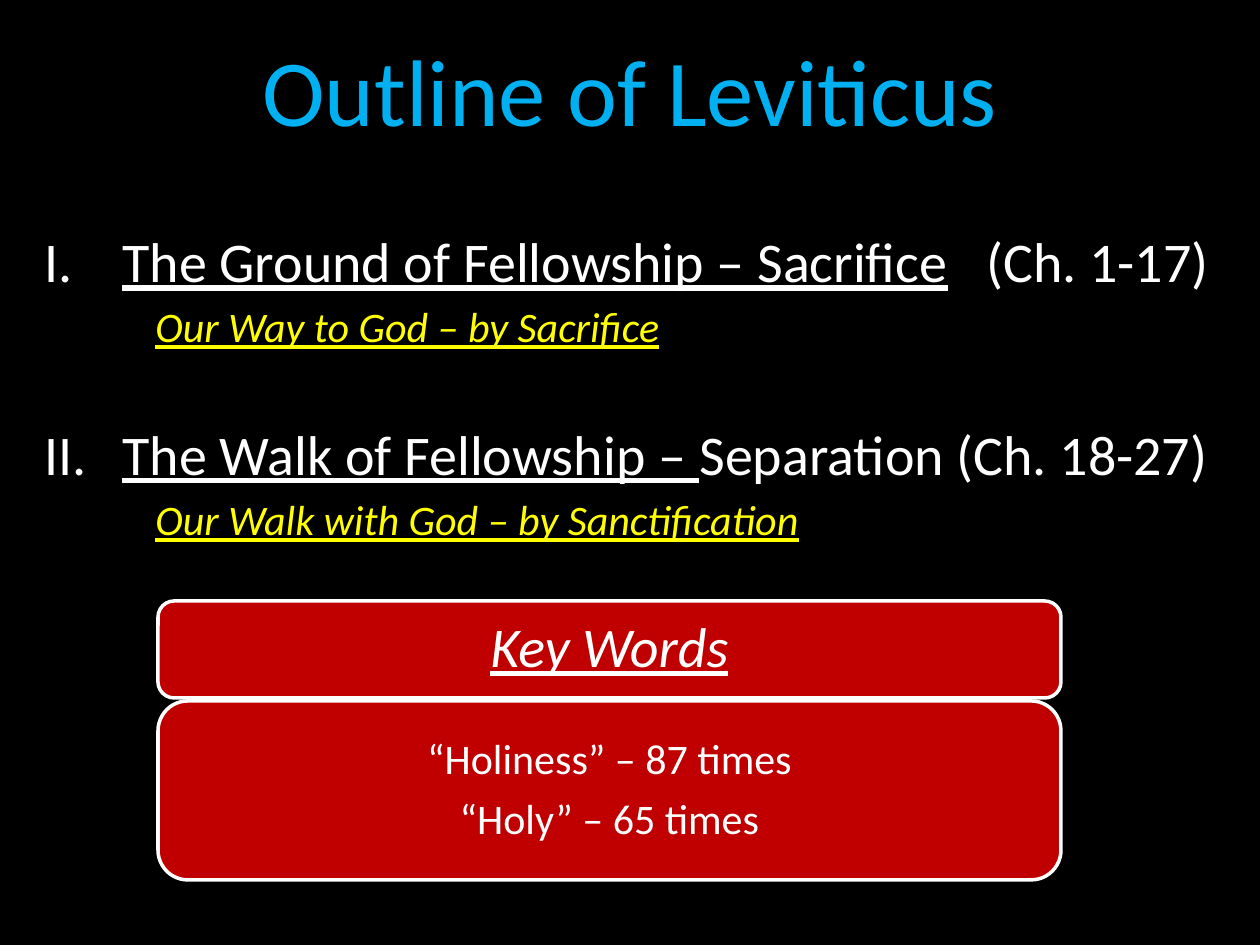
from pptx import Presentation
from pptx.dml.color import RGBColor
from pptx.enum.shapes import MSO_SHAPE
from pptx.enum.text import MSO_ANCHOR, PP_ALIGN
from pptx.oxml.ns import qn
from pptx.util import Pt
from lxml import etree

ROUND = MSO_SHAPE.ROUNDED_RECTANGLE
MID, TOP = MSO_ANCHOR.MIDDLE, MSO_ANCHOR.TOP
LEFT, CENTER = PP_ALIGN.LEFT, PP_ALIGN.CENTER

# Content
TITLE = "Outline of Leviticus"
# underlined part, plain part, extra gap between them (pt), subline
POINTS = [
    ("The Ground of Fellowship – Sacrifice", " (Ch. 1-17)", 14.5,
     "Our Way to God – by Sacrifice"),
    ("The Walk of Fellowship – ", "Separation (Ch. 18-27)", 0,
     "Our Walk with God – by Sanctification"),
]
KEY = "Key Words"
COUNTS = ["“Holiness” – 87 times", "“Holy” – 65 times"]

# Theme and layout
THEME = {
    "font": "Calibri", "back": "000000", "title": "00B0F0", "text": "FFFFFF",
    "sub": "FFFF00", "box": "C00000", "huge": 54, "big": 32, "small": 24,
}
PX = 914400 // 126
SIZE = (1260, 945)
HEAD = (63, 10, 1134, 158)
BODY = (32, 220, 1207, 400)
BOX_X, BOX_W = 158, 903
BOXES = [(601, 97, 16), (701, 179, 13)]  # top, height, inset
HANG = 78
SUB_X = 189
BREAK = 39  # space above a later point, pt


def px(*vals):
    return [round(v * PX) for v in vals]


def rgb(name):
    return RGBColor.from_string(THEME[name])


def style(run, size, color, under=False, slant=False):
    font = run.font
    font.name, font.size = THEME["font"], Pt(THEME[size])
    font.color.rgb = rgb(color)
    font.underline, font.italic = under, slant


def setup(shape, anchor, inset=None):
    frame = shape.text_frame
    frame.word_wrap = True
    frame.vertical_anchor = anchor
    if inset:
        pad = px(inset)[0]
        frame.margin_left = frame.margin_right = pad
        frame.margin_top = frame.margin_bottom = pad
    return frame


def indent(para, left, number=False):
    props = para._p.get_or_add_pPr()
    for key, val in zip(("marL", "indent"), px(left, -HANG)):
        props.set(key, str(val))
    if number:
        mark = etree.SubElement(props, qn("a:buFont"))
        mark.set("typeface", "+mj-lt")
        mark = etree.SubElement(props, qn("a:buAutoNum"))
        mark.set("type", "romanUcPeriod")
    else:
        etree.SubElement(props, qn("a:buNone"))


def add_box(slide, place, lines, size, fancy):
    top, high, inset = place
    box = slide.shapes.add_shape(ROUND, *px(BOX_X, top, BOX_W, high))
    box.shadow.inherit = False
    box.fill.solid()
    box.fill.fore_color.rgb = rgb("box")
    box.line.color.rgb = rgb("text")
    box.line.width = Pt(2)
    frame = setup(box, MID, inset)
    frame.text = "\n".join(lines)
    for para in frame.paragraphs:
        para.alignment = CENTER
        para.line_spacing = 0.9
        para.space_after = Pt(round(THEME[size] * 0.35, 1))
        style(para.runs[0], size, "text", fancy, fancy)


def add_points(slide):
    frame = setup(slide.shapes.add_textbox(*px(*BODY)), TOP)
    for i, (lead, rest, gap, sub) in enumerate(POINTS):
        para = frame.add_paragraph() if i else frame.paragraphs[0]
        para.alignment = LEFT
        para.space_before = Pt(BREAK if i else 6)
        indent(para, HANG, True)
        for text, under in ((lead, True), (rest, False)):
            # The wide gap is spacing on the first blank
            parts = (text[:1], text[1:]) if gap and not under else (text,)
            for part in parts:
                run = para.add_run()
                run.text = part
                style(run, "big", "text", under)
                if part == " ":
                    run.font._element.set("spc", str(round(gap * 100)))
        para = frame.add_paragraph()
        para.text = sub
        para.level = 1
        para.space_before = Pt(4)
        indent(para, SUB_X)
        style(para.runs[0], "small", "sub", True, True)


def main():
    deck = Presentation()
    deck.slide_width, deck.slide_height = px(*SIZE)
    slide = deck.slides.add_slide(deck.slide_layouts[6])
    slide.background.fill.solid()
    slide.background.fill.fore_color.rgb = rgb("back")

    # Title
    frame = setup(slide.shapes.add_textbox(*px(*HEAD)), MID)
    frame.text = TITLE
    frame.paragraphs[0].alignment = CENTER
    style(frame.paragraphs[0].runs[0], "huge", "title")

    # Outline and key words
    add_points(slide)
    add_box(slide, BOXES[0], [KEY], "big", True)
    add_box(slide, BOXES[1], COUNTS, "small", False)
    deck.save("out.pptx")


if __name__ == "__main__":
    main()
